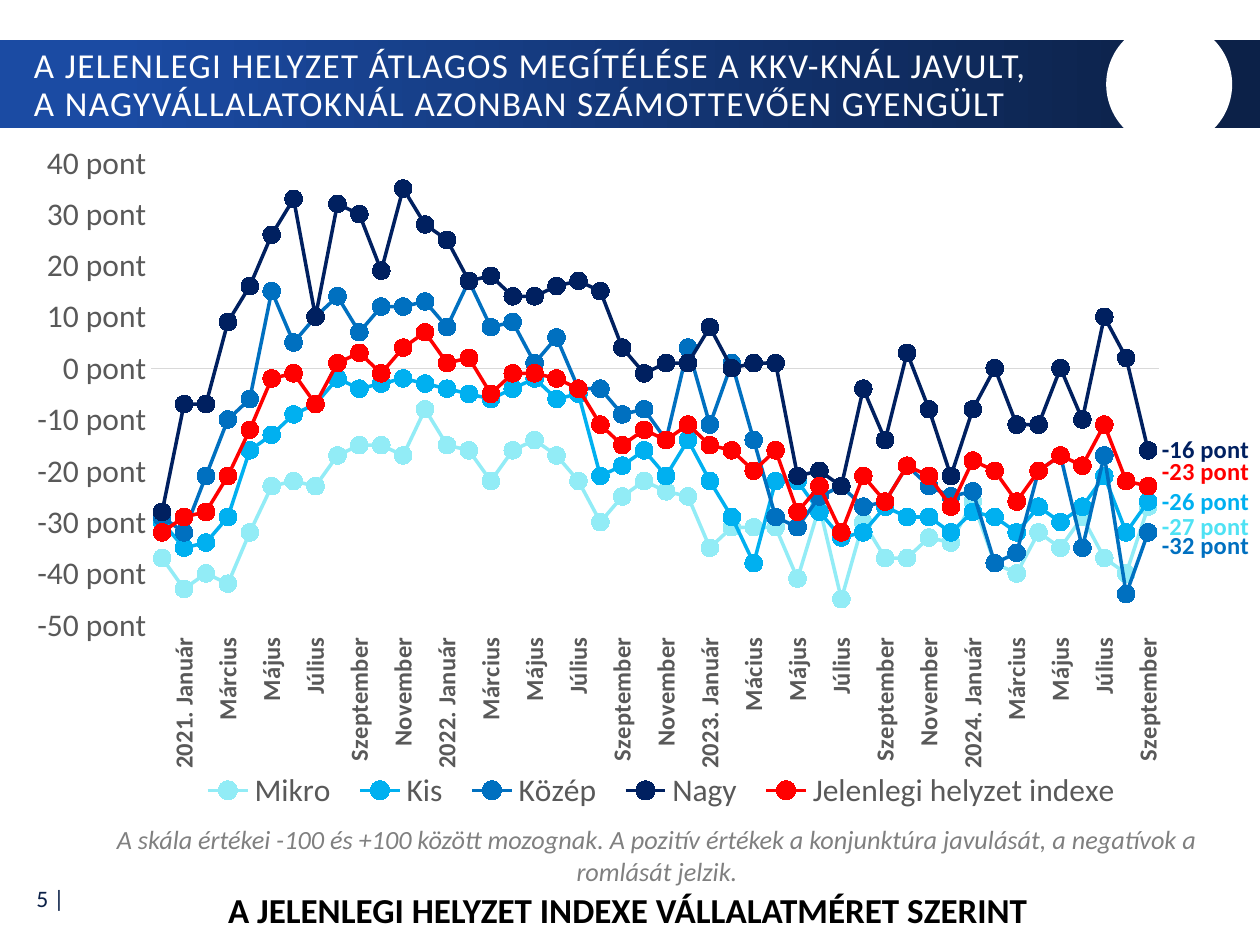
from lxml.etree import SubElement
from pptx import Presentation
from pptx.chart.data import CategoryChartData
from pptx.dml.color import RGBColor
from pptx.enum.chart import (XL_CHART_TYPE, XL_LABEL_POSITION as LabelPosition,
                             XL_LEGEND_POSITION, XL_MARKER_STYLE,
                             XL_TICK_LABEL_POSITION, XL_TICK_MARK)
from pptx.enum.shapes import MSO_SHAPE as Shape
from pptx.enum.text import MSO_ANCHOR as Anchor, MSO_AUTO_SIZE, PP_ALIGN as Align
from pptx.oxml.ns import qn
from pptx.util import Cm, Pt

FONT = "Calibri"
WHITE = RGBColor(0xFF, 0xFF, 0xFF)
BLACK = RGBColor(0x00, 0x00, 0x00)
BLUE = RGBColor(0x1B, 0x4B, 0xA3)
NAVY = RGBColor(0x0C, 0x21, 0x48)
NOTE_GRAY = RGBColor(0x80, 0x80, 0x80)
AXIS_GRAY = RGBColor(0x59, 0x59, 0x59)
LINE_GRAY = RGBColor(0xD9, 0xD9, 0xD9)
MICRO = RGBColor(0x92, 0xEC, 0xF6)
MICRO_LABEL = RGBColor(0x4F, 0xE2, 0xF4)
SMALL = RGBColor(0x00, 0xB0, 0xF0)
MEDIUM = RGBColor(0x00, 0x70, 0xC0)
LARGE = RGBColor(0x00, 0x20, 0x60)
RED = RGBColor(0xFF, 0x00, 0x00)

POINT_FORMAT = 'General\\ "pont"'
TITLE = ("A JELENLEGI HELYZET ÁTLAGOS MEGÍTÉLÉSE A KKV-KNÁL JAVULT, \v"
         "A NAGYVÁLLALATOKNÁL AZONBAN SZÁMOTTEVŐEN GYENGÜLT")
NOTE = ("A skála értékei -100 és +100 között mozognak. A pozitív értékek a "
        "konjunktúra javulását, a negatívok a romlását jelzik.")
CAPTION = "A JELENLEGI HELYZET INDEXE VÁLLALATMÉRET SZERINT"

# Every second month is labelled
MONTHS = ["2021. Január", "Március", "Május", "Július", "Szeptember", "November",
          "2022. Január", "Március", "Május", "Július", "Szeptember", "November",
          "2023. Január", "Mácius", "Május", "Július", "Szeptember", "November",
          "2024. Január", "Március", "Május", "Július", "Szeptember"]
CATEGORIES = [label for month in MONTHS for label in ("", month)]

# Name, line colour, end label colour, vertical label shift, values
SERIES = [
    ("Mikro", MICRO, MICRO_LABEL, 0.03,
     [-37, -43, -40, -42, -32, -23, -22, -23, -17, -15, -15, -17, -8, -15, -16, -22,
      -16, -14, -17, -22, -30, -25, -22, -24, -25, -35, -31, -31, -31, -41, -27, -45,
      -30, -37, -37, -33, -34, -26, -38, -40, -32, -35, -29, -37, -40, -27]),
    ("Kis", SMALL, SMALL, 0,
     [-30, -35, -34, -29, -16, -13, -9, -7, -2, -4, -3, -2, -3, -4, -5, -6,
      -4, -2, -6, -5, -21, -19, -16, -21, -14, -22, -29, -38, -22, -22, -28, -33,
      -32, -27, -29, -29, -32, -28, -29, -32, -27, -30, -27, -21, -32, -26]),
    ("Közép", MEDIUM, MEDIUM, 0.02,
     [-29, -32, -21, -10, -6, 15, 5, 10, 14, 7, 12, 12, 13, 8, 17, 8,
      9, 1, 6, -4, -4, -9, -8, -14, 4, -11, 1, -14, -29, -31, -25, -23,
      -27, -26, -19, -23, -25, -24, -38, -36, -20, -17, -35, -17, -44, -32]),
    ("Nagy", LARGE, LARGE, 0,
     [-28, -7, -7, 9, 16, 26, 33, 10, 32, 30, 19, 35, 28, 25, 17, 18,
      14, 14, 16, 17, 15, 4, -1, 1, 1, 8, 0, 1, 1, -21, -20, -23,
      -4, -14, 3, -8, -21, -8, 0, -11, -11, 0, -10, 10, 2, -16]),
    ("Jelenlegi helyzet indexe", RED, RED, -0.02,
     [-32, -29, -28, -21, -12, -2, -1, -7, 1, 3, -1, 4, 7, 1, 2, -5,
      -1, -1, -2, -4, -11, -15, -12, -14, -11, -15, -16, -20, -16, -28, -23, -32,
      -21, -26, -19, -21, -27, -18, -20, -26, -20, -17, -19, -11, -22, -23]),
]


def set_attributes(target, values):
    for name, value in values.items():
        setattr(target, name, value)


def set_font(font, size, color, **extra):
    set_attributes(font, {"name": FONT, "size": Pt(size), **extra})
    font.color.rgb = color


def manual_layout(parent, index, settings):
    """Replace a chart element's layout, placed at the given child index."""
    for old_layout in parent.findall(qn("c:layout")):
        parent.remove(old_layout)
    layout = SubElement(parent, qn("c:layout"))
    manual = SubElement(layout, qn("c:manualLayout"))
    for name, value in settings.items():
        SubElement(manual, qn(f"c:{name}")).set("val", str(value))
    parent.insert(index, layout)


def add_shape(slide, preset, left, top, width, height):
    shape = slide.shapes.add_shape(preset, Cm(left), Cm(top), Cm(width), Cm(height))
    shape.shadow.inherit = False
    shape.line.fill.background()
    return shape


def add_banner(slide):
    fill = add_shape(slide, Shape.RECTANGLE, 0, 0.81, 25.4, 1.78).fill
    fill.gradient()
    fill.gradient_angle = 0
    for stop, position, color in zip(fill.gradient_stops, (0.09, 0.95), (BLUE, NAVY)):
        stop.position = position
        stop.color.rgb = color
    circle = add_shape(slide, Shape.OVAL, 22.3, 0.43, 2.54, 2.54)
    circle.fill.solid()
    circle.fill.fore_color.rgb = WHITE


def add_title(slide):
    title = slide.shapes.title
    set_attributes(title, {"left": Cm(0.43), "top": Cm(0.89),
                           "width": Cm(21.87), "height": Cm(1.7)})
    frame = title.text_frame
    frame.text = TITLE
    set_attributes(frame, {"vertical_anchor": Anchor.MIDDLE, "word_wrap": True,
                           "auto_size": MSO_AUTO_SIZE.NONE})
    paragraph = frame.paragraphs[0]
    set_attributes(paragraph, {"alignment": Align.LEFT, "line_spacing": 0.9})
    for run in paragraph.runs:
        set_font(run.font, 20, WHITE)
        run.font._element.set("spc", "80")
    slide.shapes._spTree.append(title._element)  # in front of the banner


def add_text(slide, text, box, size, color, align=Align.CENTER, anchor=Anchor.TOP, **style):
    frame = slide.shapes.add_textbox(*map(Cm, box)).text_frame
    set_attributes(frame, {"word_wrap": True, "vertical_anchor": anchor})
    paragraph = frame.paragraphs[0]
    paragraph.alignment = align
    run = paragraph.add_run()
    run.text = text
    set_font(run.font, size, color, **style)


def format_axes(chart):
    months, points = chart.category_axis, chart.value_axis
    for axis in (months, points):
        set_attributes(axis, {"has_major_gridlines": False,
                              "major_tick_mark": XL_TICK_MARK.NONE,
                              "minor_tick_mark": XL_TICK_MARK.NONE})
    months.tick_label_position = XL_TICK_LABEL_POSITION.LOW
    months.format.line.color.rgb = LINE_GRAY
    months.format.line.width = Pt(0.75)
    set_font(months.tick_labels.font, 14, AXIS_GRAY, bold=True)
    months._element.find(qn("c:txPr")).find(qn("a:bodyPr")).set("rot", "-5400000")
    skip = SubElement(months._element, qn("c:tickLblSkip"))
    skip.set("val", "1")
    months._element.find(qn("c:noMultiLvlLbl")).addprevious(skip)

    set_attributes(points, {"minimum_scale": -50, "maximum_scale": 40, "major_unit": 10})
    points.format.line.fill.background()
    set_attributes(points.tick_labels, {"number_format": POINT_FORMAT,
                                        "number_format_is_linked": False})
    set_font(points.tick_labels.font, 18, AXIS_GRAY)


def format_legend(chart):
    chart.has_legend = True
    legend = chart.legend
    set_attributes(legend, {"position": XL_LEGEND_POSITION.BOTTOM,
                            "include_in_layout": False})
    set_font(legend.font, 18, AXIS_GRAY)
    manual_layout(legend._element, 1, {"xMode": "edge", "yMode": "edge",
                                       "x": 0.15, "y": 0.92, "w": 0.75, "h": 0.08})


def format_series(series, color, label_color, label_shift):
    series.smooth = False
    series.format.line.color.rgb = color
    series.format.line.width = Pt(2)
    marker = series.marker
    set_attributes(marker, {"style": XL_MARKER_STYLE.CIRCLE, "size": 10})
    marker.format.fill.solid()
    marker.format.fill.fore_color.rgb = color
    marker.format.line.color.rgb = color

    label = series.points[len(CATEGORIES) - 1].data_label
    set_font(label.font, 14, label_color, bold=True)
    label.position = LabelPosition.RIGHT
    element = series._element.find(qn("c:dLbls")).find(qn("c:dLbl"))
    number_format = SubElement(element, qn("c:numFmt"))
    number_format.set("formatCode", POINT_FORMAT)
    number_format.set("sourceLinked", "0")
    element.insert(1, number_format)
    if label_shift:
        manual_layout(element, 1, {"x": 0, "y": label_shift})


def add_index_chart(slide):
    data = CategoryChartData()
    data.categories = CATEGORIES
    for name, *_, values in SERIES:
        data.add_series(name, values)
    chart = slide.shapes.add_chart(XL_CHART_TYPE.LINE_MARKERS, Cm(0), Cm(2.59),
                                   Cm(25.4), Cm(13.9), data).chart
    set_font(chart.font, 18, BLACK)
    chart.has_title = False
    chart.plots[0].vary_by_categories = False
    format_legend(chart)
    format_axes(chart)
    for series, (_, *style, _) in zip(chart.plots[0].series, SERIES):
        format_series(series, *style)
    manual_layout(chart._chartSpace.chart.plotArea, 0,
                  {"layoutTarget": "inner", "xMode": "edge", "yMode": "edge",
                   "x": 0.12, "y": 0.05, "w": 0.8, "h": 0.67})


def main():
    presentation = Presentation()
    presentation.slide_width, presentation.slide_height = Cm(25.4), Cm(19.05)
    slide = presentation.slides.add_slide(presentation.slide_layouts[5])
    add_banner(slide)
    add_title(slide)
    add_text(slide, "5 |", (0.03, 17.63, 1.52, 0.94), 13.5, NAVY, Align.RIGHT, Anchor.MIDDLE)
    add_text(slide, NOTE, (1.65, 16.48, 23.19, 1.55), 15, NOTE_GRAY, italic=True)
    add_text(slide, CAPTION, (0, 17.78, 25.32, 1.12), 20, BLACK, bold=True)
    add_index_chart(slide)
    presentation.save("out.pptx")


if __name__ == "__main__":
    main()
